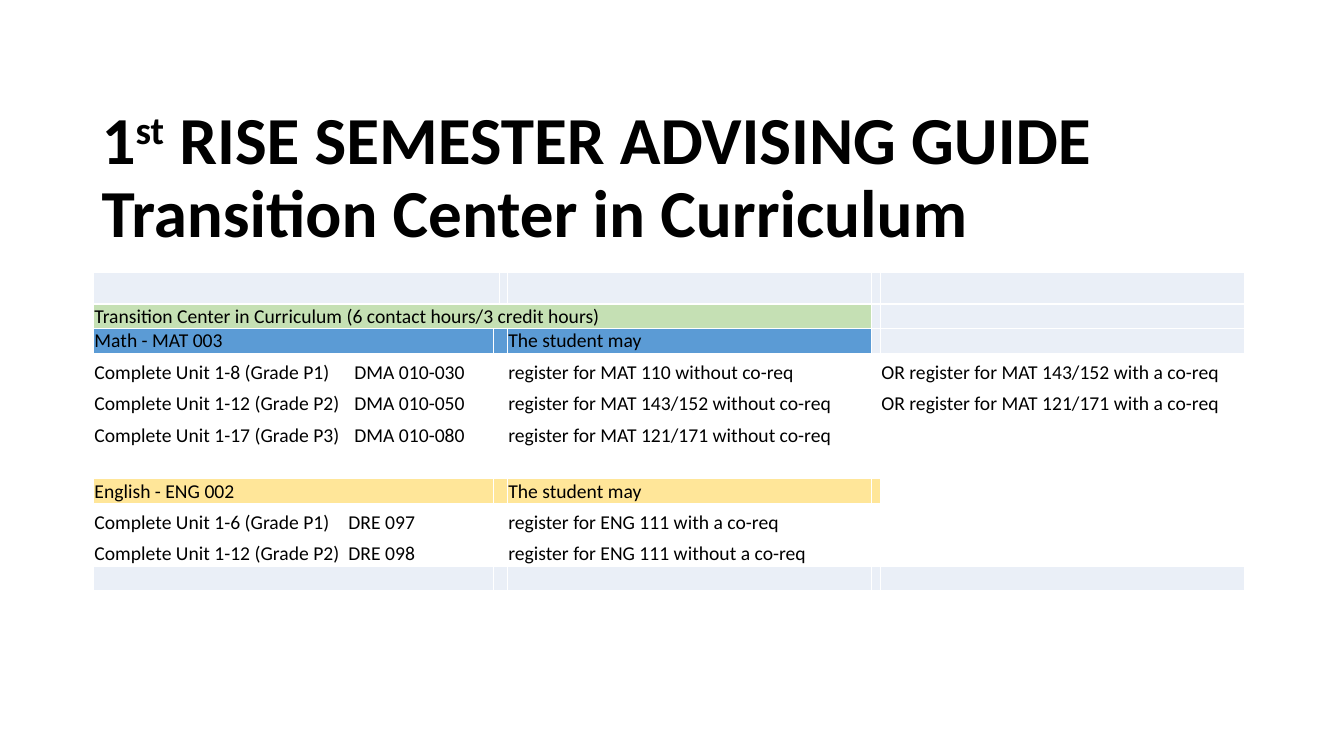
from dataclasses import dataclass

from lxml import etree
from pptx import Presentation
from pptx.dml.color import RGBColor
from pptx.enum import text
from pptx.oxml import ns
from pptx.util import Cm, Pt

COLORS = {
    "ink": "000000",
    "line": "FFFFFF",
    "pale": "EAEFF7",
    "green": "C5E0B4",
    "blue": "5B9BD5",
    "yellow": "FFE699",
}
FONT = "Calibri"
BODY_SIZE = 14
COLUMN_WIDTHS = (10.08, 0.15, 0.2, 9.17, 0.23, 9.17)
TALL, SHORT = 0.79, 0.62
MATH_TAB, ENGLISH_TAB = 6.55, 6.4
WHITE_ROW = (None,) * 6
PALE_ROW = ("pale",) * 6


@dataclass(frozen=True)
class GuideRow:
    """One table row; entries go to columns 0, 3 and 5, and tab sets the course codes."""
    entries: tuple[str, str, str] = ("", "", "")
    fills: tuple[str | None, ...] = WHITE_ROW
    height: float = TALL
    merged: tuple[int, int] = (1, 2)
    tab: float | None = None


GUIDE = (
    GuideRow(fills=PALE_ROW, merged=(0, 1)),
    GuideRow(("Transition Center in Curriculum (6 contact hours/3 credit hours)", "", ""),
             ("green",) * 4 + ("pale",) * 2, SHORT, (0, 3)),
    GuideRow(("Math - MAT 003", "The student may", ""),
             ("blue",) * 4 + ("pale",) * 2, SHORT),
    GuideRow(("Complete Unit 1-8 (Grade P1)\tDMA 010-030",
              "register for MAT 110 without co-req",
              "OR register for MAT 143/152 with a co-req"), tab=MATH_TAB),
    GuideRow(("Complete Unit 1-12 (Grade P2)\tDMA 010-050",
              "register for MAT 143/152 without co-req",
              "OR register for MAT 121/171 with a co-req"), tab=MATH_TAB),
    GuideRow(("Complete Unit 1-17 (Grade P3)\tDMA 010-080",
              "register for MAT 121/171 without co-req", ""), tab=MATH_TAB),
    GuideRow(),
    GuideRow(("English - ENG 002", "The student may", ""),
             ("yellow",) * 5 + (None,), SHORT),
    GuideRow(("Complete Unit 1-6 (Grade P1)\tDRE 097",
              "register for ENG 111 with a co-req", ""), tab=ENGLISH_TAB),
    GuideRow(("Complete Unit 1-12 (Grade P2)\tDRE 098",
              "register for ENG 111 without a co-req", ""), tab=ENGLISH_TAB),
    GuideRow(fills=PALE_ROW, height=SHORT),
)


def rgb(name: str) -> RGBColor:
    return RGBColor.from_string(COLORS[name])


def format_runs(paragraph, size: float, bold: bool = False) -> None:
    for run in paragraph.runs:
        run.font.name = FONT
        run.font.size = Pt(size)
        run.font.bold = bold
        run.font.color.rgb = rgb("ink")


def add_borders(cell) -> None:
    properties = cell._tc.get_or_add_tcPr()
    for side in ("lnL", "lnR", "lnT", "lnB"):
        border = etree.SubElement(properties, ns.qn(f"a:{side}"), w=str(Pt(1)))
        fill = etree.SubElement(border, ns.qn("a:solidFill"))
        etree.SubElement(fill, ns.qn("a:srgbClr"), val=COLORS["line"])


def add_tab_stop(paragraph, position: float) -> None:
    tabs = etree.SubElement(paragraph._p.get_or_add_pPr(), ns.qn("a:tabLst"))
    etree.SubElement(tabs, ns.qn("a:tab"), pos=str(Cm(position)), algn="l")


def fill_cell(cell, entry: str, fill: str | None, tab: float | None) -> None:
    cell.margin_left = cell.margin_right = cell.margin_top = Cm(0.02)
    cell.margin_bottom = 0
    cell.vertical_anchor = text.MSO_ANCHOR.BOTTOM
    add_borders(cell)
    if fill:
        cell.fill.solid()
        cell.fill.fore_color.rgb = rgb(fill)
    else:
        cell.fill.background()
    paragraph = cell.text_frame.paragraphs[0]
    if entry:
        paragraph.text = entry
        format_runs(paragraph, BODY_SIZE)
        if tab and "\t" in entry:
            add_tab_stop(paragraph, tab)
    else:
        # The size of an empty paragraph keeps the short rows short.
        etree.SubElement(paragraph._p, ns.qn("a:endParaRPr"), sz=str(BODY_SIZE * 100))


def add_heading(slide) -> None:
    frame = slide.shapes.add_textbox(Cm(2.31), Cm(1.75), Cm(29.21), Cm(4.72)).text_frame
    frame.word_wrap = True
    frame.vertical_anchor = text.MSO_ANCHOR.BOTTOM
    frame.text = "1\nTransition Center in Curriculum"
    guide_line = frame.paragraphs[0]
    ordinal = guide_line.add_run()
    ordinal.text = "st"
    ordinal.font._element.set("baseline", "30000")
    guide_line.add_run().text = " RISE SEMESTER ADVISING GUIDE"
    for paragraph in frame.paragraphs:
        paragraph.line_spacing = 0.9
        format_runs(paragraph, 48, bold=True)


def add_guide(slide) -> None:
    table = slide.shapes.add_table(
        len(GUIDE), len(COLUMN_WIDTHS), Cm(2.36), Cm(6.87),
        Cm(sum(COLUMN_WIDTHS)), Cm(sum(row.height for row in GUIDE))).table
    table.first_row = table.horz_banding = False
    for column, width in zip(table.columns, COLUMN_WIDTHS):
        column.width = Cm(width)
    for index, row in enumerate(GUIDE):
        table.rows[index].height = Cm(row.height)
        entries = dict(zip((0, 3, 5), row.entries))
        for column, fill in enumerate(row.fills):
            fill_cell(table.cell(index, column), entries.get(column, ""), fill, row.tab)
        first, last = row.merged
        table.cell(index, first).merge(table.cell(index, last))


def main() -> None:
    deck = Presentation()
    deck.slide_width, deck.slide_height = Cm(33.87), Cm(19.05)
    slide = deck.slides.add_slide(deck.slide_layouts[6])
    add_heading(slide)
    add_guide(slide)
    deck.save("out.pptx")


if __name__ == "__main__":
    main()
